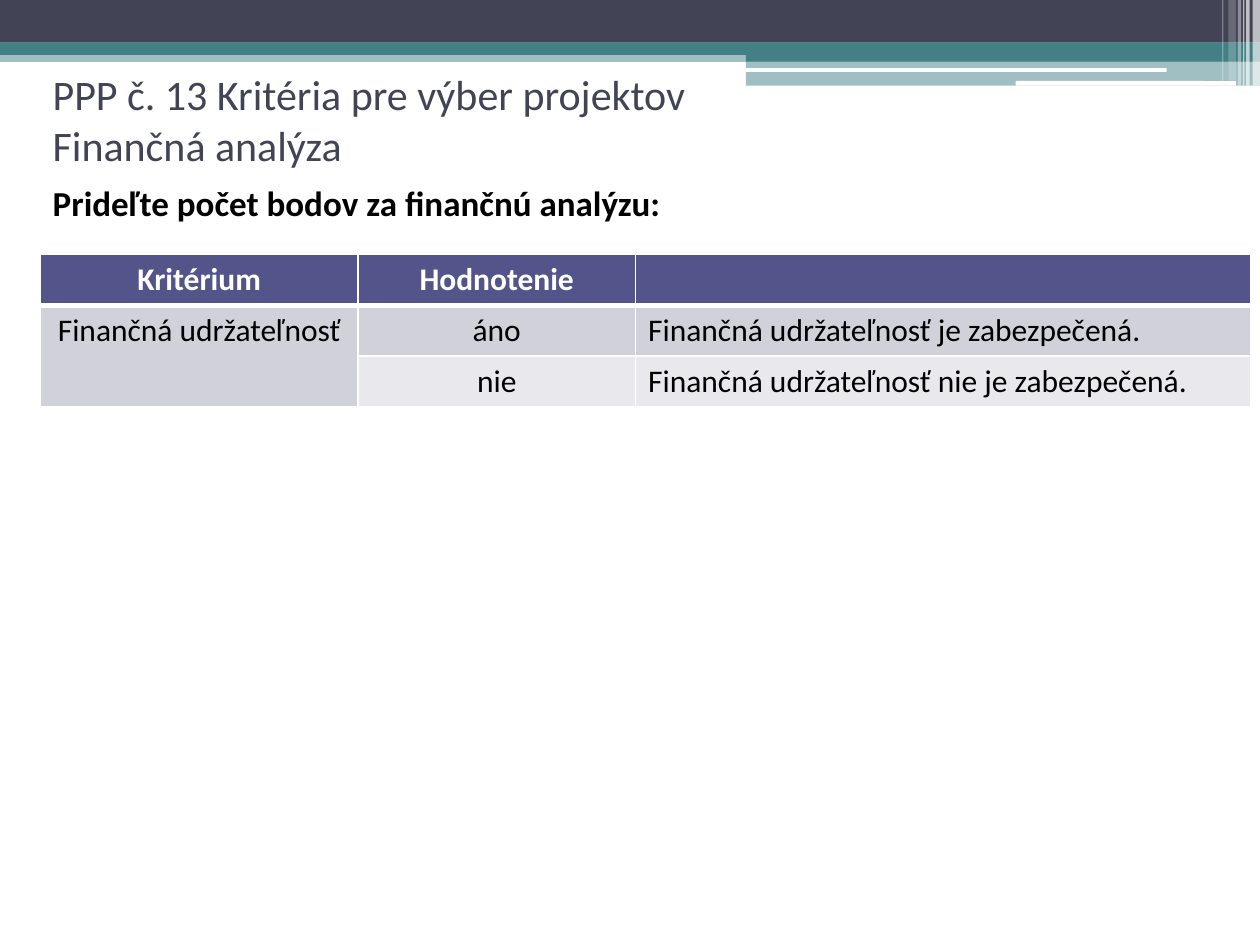
import dataclasses

import lxml.etree
import pptx
import pptx.dml.color
import pptx.enum.shapes
import pptx.enum.text
import pptx.oxml.ns
import pptx.util

Pt = pptx.util.Pt
RGB = pptx.dml.color.RGBColor.from_string
SHAPE = pptx.enum.shapes.MSO_SHAPE
ALIGN = pptx.enum.text.PP_ALIGN
ANCHOR = pptx.enum.text.MSO_ANCHOR
qn = pptx.oxml.ns.qn


@dataclasses.dataclass(frozen=True)
class Theme:
    font: str = "Calibri"
    dark: str = "424456"
    teal: str = "438086"
    white: str = "FFFFFF"
    black: str = "000000"
    header: str = "53548A"
    rows: tuple = ("D1D1DA", "E9E9ED")
    title_size: int = 24
    lead_size: int = 20
    table_size: int = 18


THEME = Theme()


def add_run(p, text, size, color, bold=False):
    r = p.add_run()
    r.text = text
    r.font.name = THEME.font
    r.font.size = Pt(size)
    r.font.bold = bold
    r.font.color.rgb = RGB(color)


def add_text_box(slide, box, anchor):
    tf = slide.shapes.add_textbox(*map(Pt, box)).text_frame
    tf.word_wrap = True
    tf.vertical_anchor = anchor
    return tf


def add_bar(slide, box, color, opacity=100, kind=SHAPE.RECTANGLE):
    sp = slide.shapes.add_shape(kind, *map(Pt, box))
    sp.shadow.inherit = False
    sp.fill.solid()
    sp.fill.fore_color.rgb = RGB(color)
    sp.line.fill.background()
    if opacity < 100:
        clr = sp.fill._xPr.find(qn("a:solidFill"))[0]
        lxml.etree.SubElement(clr, qn("a:alpha"), val=str(opacity * 1000))


def add_banner(slide, box):
    x, y, w, h = box
    right = x + w
    step_w = 293.8
    step_x = right - step_w
    add_bar(slide, (x, y + 28.8, w, 6.6), THEME.teal, 50)
    add_bar(slide, (x, y, w, 24.4), THEME.dark)
    add_bar(slide, (x, y + 24.2, w, 7.2), THEME.teal)
    add_bar(slide, (step_x, y + 28.2, step_w, 7), THEME.teal)
    add_bar(slide, (step_x, y + 35.2, step_w, h - 35.2), THEME.teal, 50)
    for left, top, width, height in ((425.5, 38.9, 241.2, 2.2), (580.4, 46.3, 126, 2.7)):
        add_bar(slide, (x + left, y + top, width, height), THEME.white,
                kind=SHAPE.ROUNDED_RECTANGLE)
    stripes = (
        (4.2, 4.2, h, 65), (7.9, 2, h, 65), (9.6, 0.7, h, 60),
        (12.7, 2, h, 40), (18, 4.3, h - 2.9, 20), (21.6, 0.7, h - 2.9, 30),
    )
    for offset, width, height, opacity in stripes:
        add_bar(slide, (right - offset, y, width, height), THEME.white, opacity)


def add_title(slide, box, lines):
    p = add_text_box(slide, box, ANCHOR.MIDDLE).paragraphs[0]
    for i, line in enumerate(lines):
        if i:
            p.add_line_break()
        add_run(p, line, THEME.title_size, THEME.dark)


def add_lead(slide, box, text):
    p = add_text_box(slide, box, ANCHOR.TOP).paragraphs[0]
    p.space_before = Pt(3)
    p._p.get_or_add_pPr().set("marL", str(Pt(8.64)))
    add_run(p, text, THEME.lead_size, THEME.black, True)


def set_borders(cell, bottom):
    tcPr = cell._tc.get_or_add_tcPr()
    for side, width in (("L", 1), ("R", 1), ("T", 1), ("B", bottom)):
        ln = lxml.etree.SubElement(tcPr, qn("a:ln" + side), w=str(Pt(width)))
        fill = lxml.etree.SubElement(ln, qn("a:solidFill"))
        lxml.etree.SubElement(fill, qn("a:srgbClr"), val=THEME.white)


def add_criteria_table(slide, box, col_widths, rows):
    table = slide.shapes.add_table(len(rows), len(col_widths), *map(Pt, box)).table
    for col, width in zip(table.columns, col_widths):
        col.width = Pt(width)
    fills = (THEME.header, *THEME.rows)
    for i, row in enumerate(rows):
        table.rows[i].height = Pt(box[3] / len(rows))
        is_header = i == 0
        for j, text in enumerate(row):
            cell = table.cell(i, j)
            set_borders(cell, 3 if is_header else 1)
            cell.fill.solid()
            cell.fill.fore_color.rgb = RGB(fills[i])
            p = cell.text_frame.paragraphs[0]
            p.font.size = Pt(THEME.table_size)
            p.alignment = ALIGN.CENTER if j < 2 else ALIGN.LEFT
            if text:
                add_run(p, text, THEME.table_size,
                        THEME.white if is_header else THEME.black, is_header)
    table.cell(1, 0).merge(table.cell(2, 0))


def main():
    prs = pptx.Presentation()
    prs.slide_width, prs.slide_height = Pt(720), Pt(540)
    slide = prs.slides.add_slide(prs.slide_layouts[6])
    add_banner(slide, (0, 0, 720, 49))
    add_title(slide, (23, 43.2, 683.3, 49.7),
              ("PPP č. 13 Kritéria pre výber projektov", "Finančná analýza"))
    add_lead(slide, (14.4, 100, 680.4, 425.5), "Prideľte počet bodov za finančnú analýzu:")
    add_criteria_table(slide, (23.2, 145.4, 691.4, 87.3), (181.4, 158.6, 351.4), (
        ("Kritérium", "Hodnotenie", ""),
        ("Finančná udržateľnosť", "áno", "Finančná udržateľnosť je zabezpečená."),
        ("", "nie", "Finančná udržateľnosť nie je zabezpečená."),
    ))
    prs.save("out.pptx")


if __name__ == "__main__":
    main()
